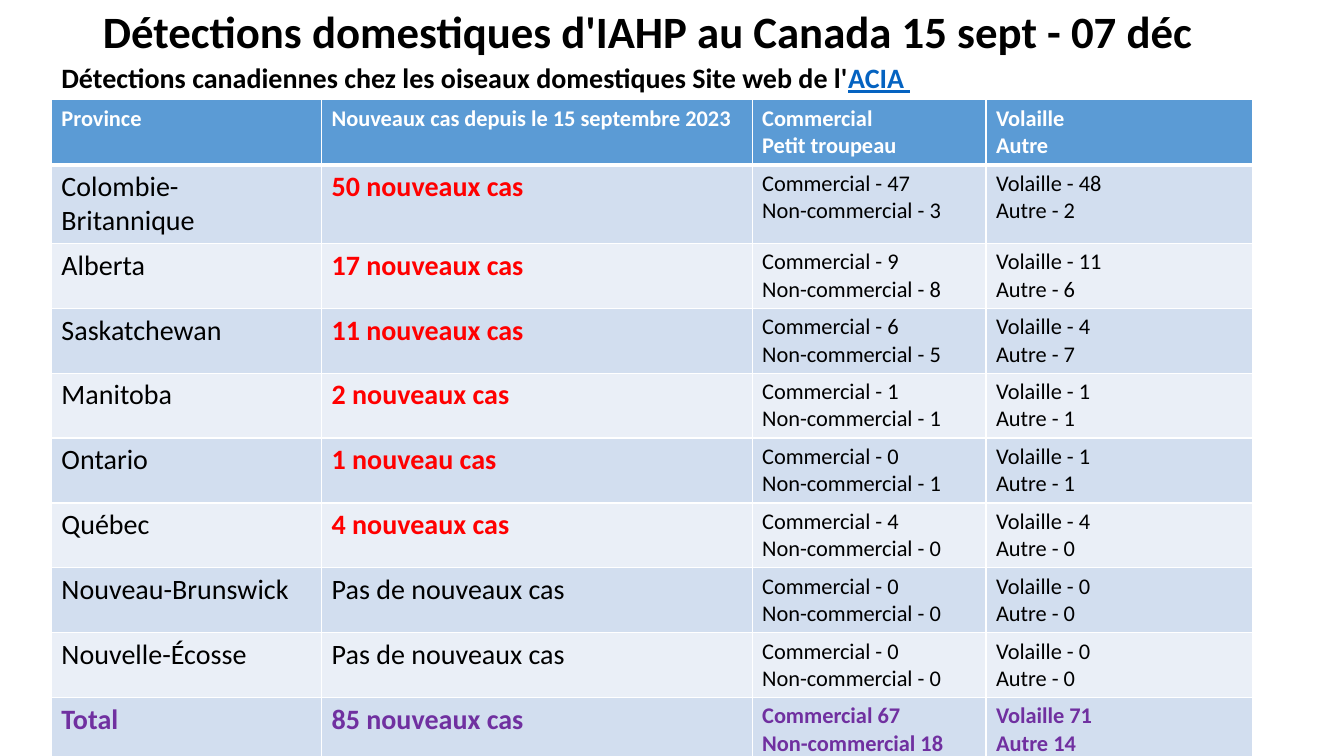
from lxml import etree
from pptx import Presentation
from pptx import util as u
from pptx.dml.color import RGBColor
from pptx.enum import text
from pptx.oxml import ns

BLACK = RGBColor(0x00, 0x00, 0x00)
WHITE = RGBColor(0xFF, 0xFF, 0xFF)
RED = RGBColor(0xFF, 0x00, 0x00)
PURPLE = RGBColor(0x70, 0x30, 0xA0)
LINK = RGBColor(0x05, 0x63, 0xC1)
BLUE = RGBColor(0x5B, 0x9B, 0xD5)
BANDS = (RGBColor(0xEA, 0xEF, 0xF7), RGBColor(0xD2, 0xDE, 0xEF))

WIDTHS = (2.68, 4.27, 2.32, 2.64)
HEIGHTS = (0.63,) * 9 + (0.72,)
HEAD = ("Province", "Nouveaux cas depuis le 15 septembre 2023",
        "Commercial\nPetit troupeau", "Volaille\nAutre")
CASES = (
    ("Colombie-Britannique", "50 nouveaux cas", 47, 3, 48, 2),
    ("Alberta", "17 nouveaux cas", 9, 8, 11, 6),
    ("Saskatchewan", "11 nouveaux cas", 6, 5, 4, 7),
    ("Manitoba", "2 nouveaux cas", 1, 1, 1, 1),
    ("Ontario", "1 nouveau cas", 0, 1, 1, 1),
    ("Québec", "4 nouveaux cas", 4, 0, 4, 0),
    ("Nouveau-Brunswick", "Pas de nouveaux cas", 0, 0, 0, 0),
    ("Nouvelle-Écosse", "Pas de nouveaux cas", 0, 0, 0, 0),
)
TOTAL = ("Total", "85 nouveaux cas", "Commercial 67\nNon-commercial 18",
         "Volaille 71\nAutre 14")


class Deck:
    face = "Calibri"

    def __init__(self):
        self.prs = Presentation()
        self.prs.slide_width = u.Inches(13.33)
        self.prs.slide_height = u.Inches(7.5)
        self.slide = self.prs.slides.add_slide(self.prs.slide_layouts[5])

    def style(self, font, size, color, **form):
        for key, val in {"name": self.face, "size": u.Pt(size), **form}.items():
            setattr(font, key, val)
        font.color.rgb = color

    def label(self, para, words, size, color, **form):
        run = para.add_run()
        run.text = words
        self.style(run.font, size, color, **form)

    def place(self, frame, anchor):
        form = {"word_wrap": True, "vertical_anchor": anchor,
                "auto_size": text.MSO_AUTO_SIZE.NONE}
        for key, val in form.items():
            setattr(frame, key, val)
        para = frame.paragraphs[0]
        para.alignment = text.PP_ALIGN.LEFT
        para.line_spacing = 0.9
        return para

    def title(self, box, words):
        shape = self.slide.shapes.title
        for key, val in zip(("left", "top", "width", "height"), box):
            setattr(shape, key, u.Inches(val))
        para = self.place(shape.text_frame, text.MSO_ANCHOR.MIDDLE)
        self.label(para, words, 32, BLACK, bold=True)

    def note(self, box, words, link):
        shape = self.slide.shapes.add_textbox(*map(u.Inches, box))
        para = self.place(shape.text_frame, text.MSO_ANCHOR.BOTTOM)
        self.label(para, words, 20, BLACK, bold=True)
        self.label(para, link, 20, LINK, bold=True, underline=True)

    def edge(self, cell, row):
        props = cell._tc.get_or_add_tcPr()
        wide = {"T": 3 if row == 1 else 1, "B": 3 if row == 0 else 1}
        for side in "LRTB":
            line = etree.SubElement(props, ns.qn(f"a:ln{side}"),
                                    w=str(u.Pt(wide.get(side, 1))))
            fill = etree.SubElement(line, ns.qn("a:solidFill"))
            etree.SubElement(fill, ns.qn("a:srgbClr"), val=str(WHITE))

    def cell(self, cell, words, row, back, size, color, bold):
        self.edge(cell, row)
        cell.fill.solid()
        cell.fill.fore_color.rgb = back
        cell.text = words
        for para in cell.text_frame.paragraphs:
            for run in para.runs:
                self.style(run.font, size, color, bold=bold)

    def table(self, left, top, rows):
        frame = self.slide.shapes.add_table(
            len(rows), len(WIDTHS), u.Inches(left), u.Inches(top),
            u.Inches(sum(WIDTHS)), u.Inches(sum(HEIGHTS)))
        grid = frame.table
        for col, width in zip(grid.columns, WIDTHS):
            col.width = u.Inches(width)
        for line, height in zip(grid.rows, HEIGHTS):
            line.height = u.Inches(height)
        last = len(rows) - 1
        for r, row in enumerate(rows):
            for c, words in enumerate(row):
                size = 20 if r and c < 2 else 16
                fresh = c == 1 and words[0].isdigit()
                color, bold = (RED, True) if fresh else (BLACK, False)
                if r in (0, last):
                    color, bold = PURPLE if r else WHITE, True
                back = BANDS[r % 2] if r else BLUE
                self.cell(grid.cell(r, c), words, r, back, size, color, bold)


def main():
    deck = Deck()
    deck.title((0.92, -0.04, 11.5, 0.76),
               "Détections domestiques d'IAHP au Canada 15 sept - 07 déc")
    deck.note((0.51, 0.45, 12.51, 0.54),
              "Détections canadiennes chez les oiseaux domestiques Site web de l'",
              "ACIA ")
    body = [(name, news, f"Commercial - {com}\nNon-commercial - {non}",
             f"Volaille - {fowl}\nAutre - {rest}")
            for name, news, com, non, fowl, rest in CASES]
    deck.table(0.51, 0.99, [HEAD, *body, TOTAL])
    deck.prs.save("out.pptx")


if __name__ == "__main__":
    main()
